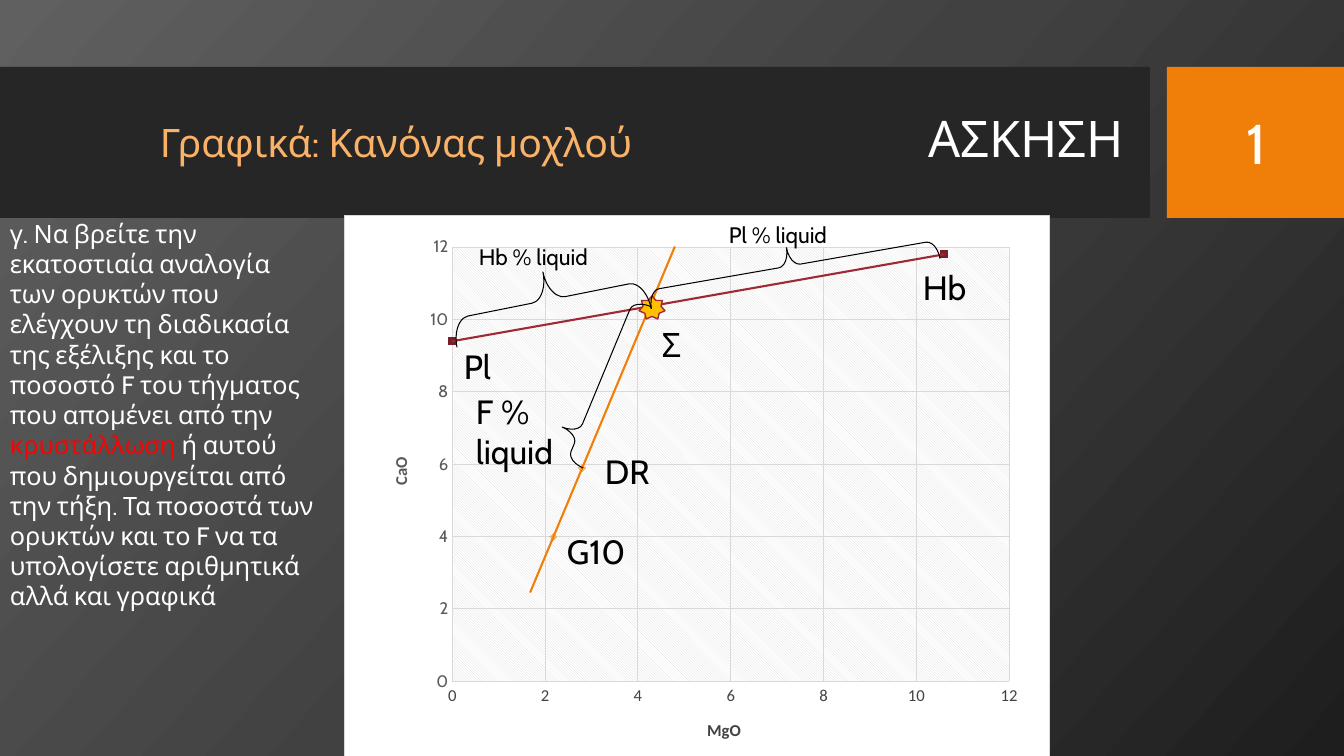
"""Build the lever-rule exercise slide with its CaO-MgO diagram."""
from copy import deepcopy

from lxml import etree
from pptx import Presentation
from pptx import util as u
from pptx.chart.data import XyChartData
from pptx.dml import color
from pptx.enum import chart as charts, shapes, text
from pptx.oxml import ns

SCALE = 914400 / 100.8
WHITE, BLACK, GRID = "FFFFFF", "000000", "D9D9D9"
ORANGE, PEACH, RED = "F07F09", "F9B268", "9F2936"
TASK = [
    ("γ. Να βρείτε την εκατοστιαία αναλογία των ορυκτών που ελέγχουν τη διαδικασία της "
     "εξέλιξης και το ποσοστό F του τήγματος που απομένει από την ", WHITE),
    ("κρυστάλλωση", "FF0000"),
    (" ή αυτού που δημιουργείται από την τήξη. Τα ποσοστά των ορυκτών και το F να τα "
     "υπολογίσετε αριθμητικά αλλά και γραφικά", WHITE),
]
LABELS = [
    ("Pl", 24, (454, 341, 57, 51)),
    ("Σ", 24, (652, 319, 57, 51)),
    ("Hb % liquid", 16, (469, 238, 132, 37)),
    ("Pl % liquid", 16, (719, 216, 132, 37)),
    ("G10", 24, (557, 526, 86, 51)),
    ("DR", 24, (595, 446, 86, 50)),
    ("Hb", 24, (913, 262, 70, 51)),
    ("F % liquid", 24, (466, 386, 109, 92)),
]
BRACES = [
    ((520, 201, 57, 198), 78.7, 0.5),
    ((774, 119, 37, 293), 80.1, 0.51),
    ((583, 293, 35, 175), 22.5, 0.83),
]
SERIES = [
    ("Series 1", [(10.6, 11.8), (0, 9.4)], "771F28", RED, charts.XL_MARKER_STYLE.SQUARE, 0, 0),
    ("Series 2", [(2.8, 5.9), (2.18, 4)], PEACH, ORANGE, charts.XL_MARKER_STYLE.DIAMOND, 2, 0.5),
]


def px(*lengths):
    """Turn pixel lengths into EMU."""
    return [u.Emu(round(length * SCALE)) for length in lengths]


def ink(value):
    """Return the colour for a hex string."""
    return color.RGBColor.from_string(value)


def apply(target, formats):
    """Set every attribute named in formats on target."""
    for name, value in formats.items():
        setattr(target, name, value)


def style_font(font, size, tint, **extra):
    """Give a font its face, size and colour."""
    apply(font, {"name": "Cabin", "size": u.Pt(size), **extra})
    font.color.rgb = ink(tint)


def xml(markup):
    """Parse chart or drawing markup."""
    return etree.fromstring(markup.replace(">", f" {ns.nsdecls('c', 'a')}>", 1))


def paint_background(page):
    """Lay a three-stop diagonal gradient behind the page."""
    fill = page.background.fill
    fill.gradient()
    fill.gradient_angle = 318
    last = fill._fill._gradFill.gsLst[-1]
    last.addprevious(deepcopy(last))
    for stop, (place, tint) in zip(fill.gradient_stops,
                                   [(0, "606060"), (0.5, "414141"), (1, "1E1E1E")]):
        stop.position = place
        stop.color.rgb = ink(tint)


def add_figure(page, kind, frame, fill=None, line=None, width=1):
    """Add a preset shape with optional fill and line."""
    figure = page.shapes.add_shape(kind, *px(*frame))
    figure.shadow.inherit = False
    if fill:
        figure.fill.solid()
        figure.fill.fore_color.rgb = ink(fill)
    else:
        figure.fill.background()
    if line:
        figure.line.color.rgb = ink(line)
        figure.line.width = u.Pt(width)
    else:
        figure.line.fill.background()
    return figure


def add_brace(page, frame, angle, point):
    """Add a rotated thin brace."""
    brace = add_figure(page, shapes.MSO_SHAPE.LEFT_BRACE, frame, line=BLACK, width=0.75)
    brace.rotation = angle
    brace.adjustments[0] = 0.3
    brace.adjustments[1] = point


def add_text(page, frame, spans, size, wrap=True):
    """Add a text box made of coloured spans."""
    box = page.shapes.add_textbox(*px(*frame))
    box.text_frame.word_wrap = wrap
    para = box.text_frame.paragraphs[0]
    for words, tint in spans:
        span = para.add_run()
        span.text = words
        style_font(span.font, size, tint)


def add_title(page, words, frame):
    """Place the title placeholder over the dark band."""
    title = page.shapes.title
    apply(title, dict(zip(("left", "top", "width", "height"), px(*frame))))
    title._element.getparent().append(title._element)
    title.text_frame.text = words
    apply(title.text_frame, {"vertical_anchor": text.MSO_ANCHOR.MIDDLE, "word_wrap": True,
                             "auto_size": text.MSO_AUTO_SIZE.NONE})
    para = title.text_frame.paragraphs[0]
    apply(para, {"alignment": text.PP_ALIGN.RIGHT, "line_spacing": 0.9})
    style_font(para.runs[0].font, 36, WHITE)


def style_axis(axis, name, face, tint):
    """Format one axis of the diagram."""
    apply(axis, {"minimum_scale": 0, "maximum_scale": 12, "major_unit": 2,
                 "has_major_gridlines": True, "has_title": True,
                 "major_tick_mark": charts.XL_TICK_MARK.NONE,
                 "minor_tick_mark": charts.XL_TICK_MARK.NONE})
    apply(axis.tick_labels, {"number_format": "0", "number_format_is_linked": False})
    style_font(axis.tick_labels.font, 11.9, tint, name=face)
    for line in (axis.format.line, axis.major_gridlines.format.line):
        line.color.rgb = ink(GRID)
        line.width = u.Pt(0.75)
    axis.axis_title.text_frame.text = name
    span = axis.axis_title.text_frame.paragraphs[0].runs[0]
    style_font(span.font, 11.9, tint, name="Calibri", bold=True)


def style_series(series, tint, trend, marker, forward, backward):
    """Show a series as markers with a linear trend line."""
    series.format.line.fill.background()
    apply(series.marker, {"style": marker, "size": 5})
    series.marker.format.fill.solid()
    series.marker.format.fill.fore_color.rgb = ink(tint)
    series.marker.format.line.color.rgb = ink(tint)
    series._element.find(ns.qn("c:xVal")).addprevious(xml(
        f'<c:trendline><c:spPr><a:ln w="19050" cap="rnd"><a:solidFill><a:srgbClr val="{trend}"/>'
        '</a:solidFill></a:ln></c:spPr><c:trendlineType val="linear"/>'
        f'<c:forward val="{forward}"/><c:backward val="{backward}"/>'
        '<c:dispRSqr val="0"/><c:dispEq val="0"/></c:trendline>'))


def fill_areas(chart):
    """Place the plot area and fill it and the chart area."""
    plot = chart._chartSpace.chart.plotArea
    for layout in plot.findall(ns.qn("c:layout")):
        plot.remove(layout)
    places = "".join(f'<c:{tag} val="{value}"/>' for tag, value in
                     [("x", 0.153), ("y", 0.058), ("w", 0.79), ("h", 0.797)])
    plot.insert(0, xml('<c:layout><c:manualLayout><c:layoutTarget val="inner"/>'
                       '<c:xMode val="edge"/><c:yMode val="edge"/>'
                       f'{places}</c:manualLayout></c:layout>'))
    plot.append(xml('<c:spPr><a:pattFill prst="ltDnDiag">'
                    f'<a:fgClr><a:srgbClr val="{GRID}"/></a:fgClr>'
                    f'<a:bgClr><a:srgbClr val="{WHITE}"/></a:bgClr></a:pattFill></c:spPr>'))
    chart._chartSpace.find(ns.qn("c:txPr")).addprevious(xml(
        f'<c:spPr><a:solidFill><a:srgbClr val="{WHITE}"/></a:solidFill><a:ln w="9525">'
        f'<a:solidFill><a:srgbClr val="{GRID}"/></a:solidFill></a:ln></c:spPr>'))


def add_diagram(page, frame):
    """Add the CaO-MgO scatter chart."""
    data = XyChartData()
    for name, points, *_ in SERIES:
        series = data.add_series(name)
        for x, y in points:
            series.add_data_point(x, y)
    chart = page.shapes.add_chart(charts.XL_CHART_TYPE.XY_SCATTER, *px(*frame), data).chart
    apply(chart, {"has_legend": False, "has_title": False})
    style_font(chart.font, 10, "595959")
    chart.plots[0].vary_by_categories = False
    style_axis(chart.category_axis, "MgO", "Calibri", "424242")
    style_axis(chart.value_axis, "CaO", "Cabin", "595959")
    for series, (_, _, *formats) in zip(chart.plots[0].series, SERIES):
        series.smooth = False
        style_series(series, *formats)
    fill_areas(chart)


def main():
    """Build and save the deck."""
    deck = Presentation()
    apply(deck, dict(zip(("slide_width", "slide_height"), px(1344, 756))))
    page = deck.slides.add_slide(deck.slide_layouts[5])
    paint_background(page)
    add_figure(page, shapes.MSO_SHAPE.RECTANGLE, (0, 67, 1150, 151), "262626")
    add_figure(page, shapes.MSO_SHAPE.RECTANGLE, (1167, 67, 177, 151), ORANGE)
    add_diagram(page, (344, 215, 706, 546))
    add_text(page, (0, 213, 327, 377), TASK, 18)
    add_title(page, "ΑΣΚΗΣΗ", (74, 82, 1060, 119))
    add_text(page, (1237, 104, 50, 78), [("1", WHITE)], 40, wrap=False)
    add_figure(page, shapes.MSO_SHAPE.STAR_7_POINT, (639, 296, 26, 23), "FFC000", RED)
    add_text(page, (150, 113, 592, 57), [("Γραφικά: Κανόνας μοχλού", PEACH)], 28)
    for brace in BRACES:
        add_brace(page, *brace)
    for words, size, frame in LABELS:
        add_text(page, frame, [(words, BLACK)], size)
    deck.save("out.pptx")


if __name__ == "__main__":
    main()
